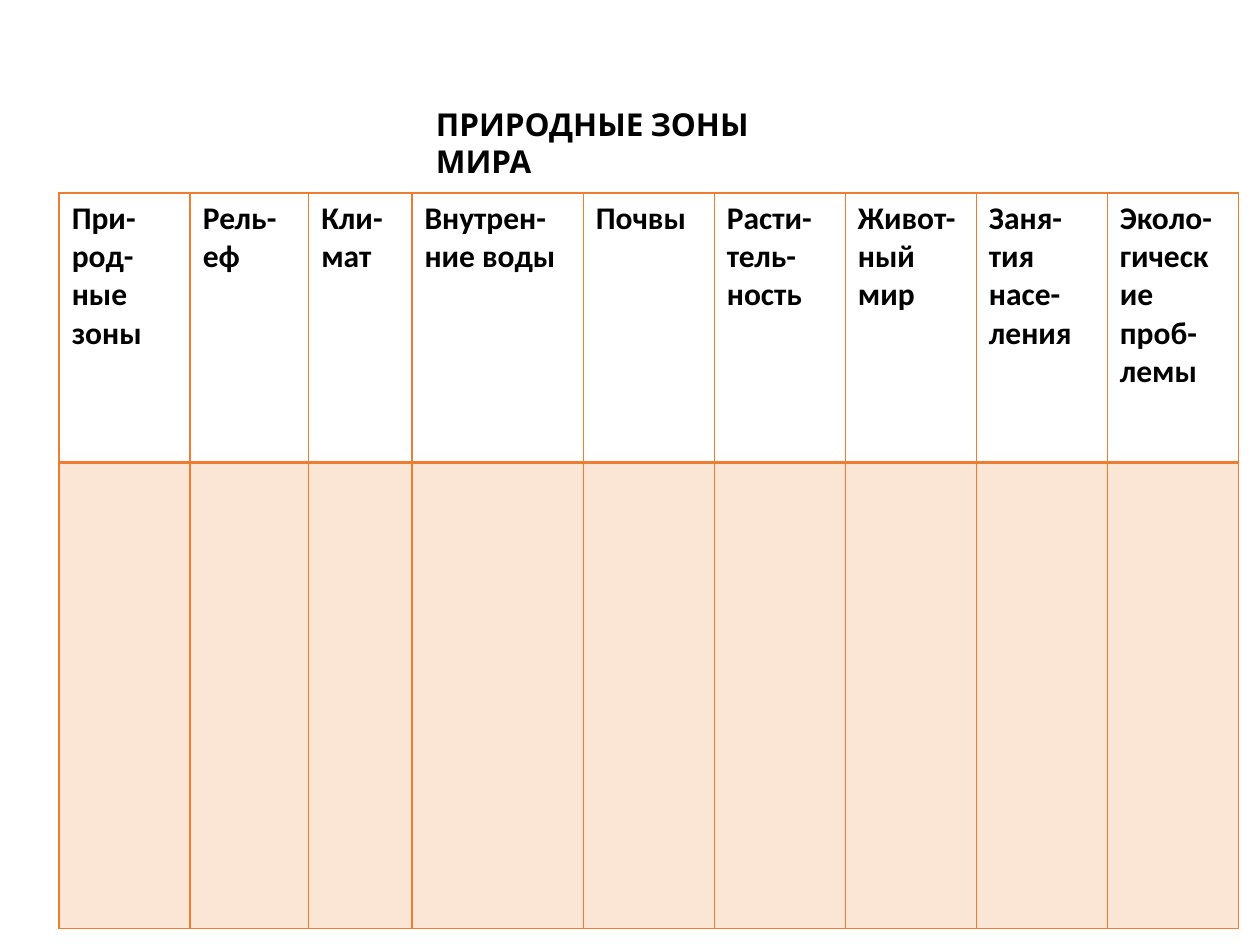
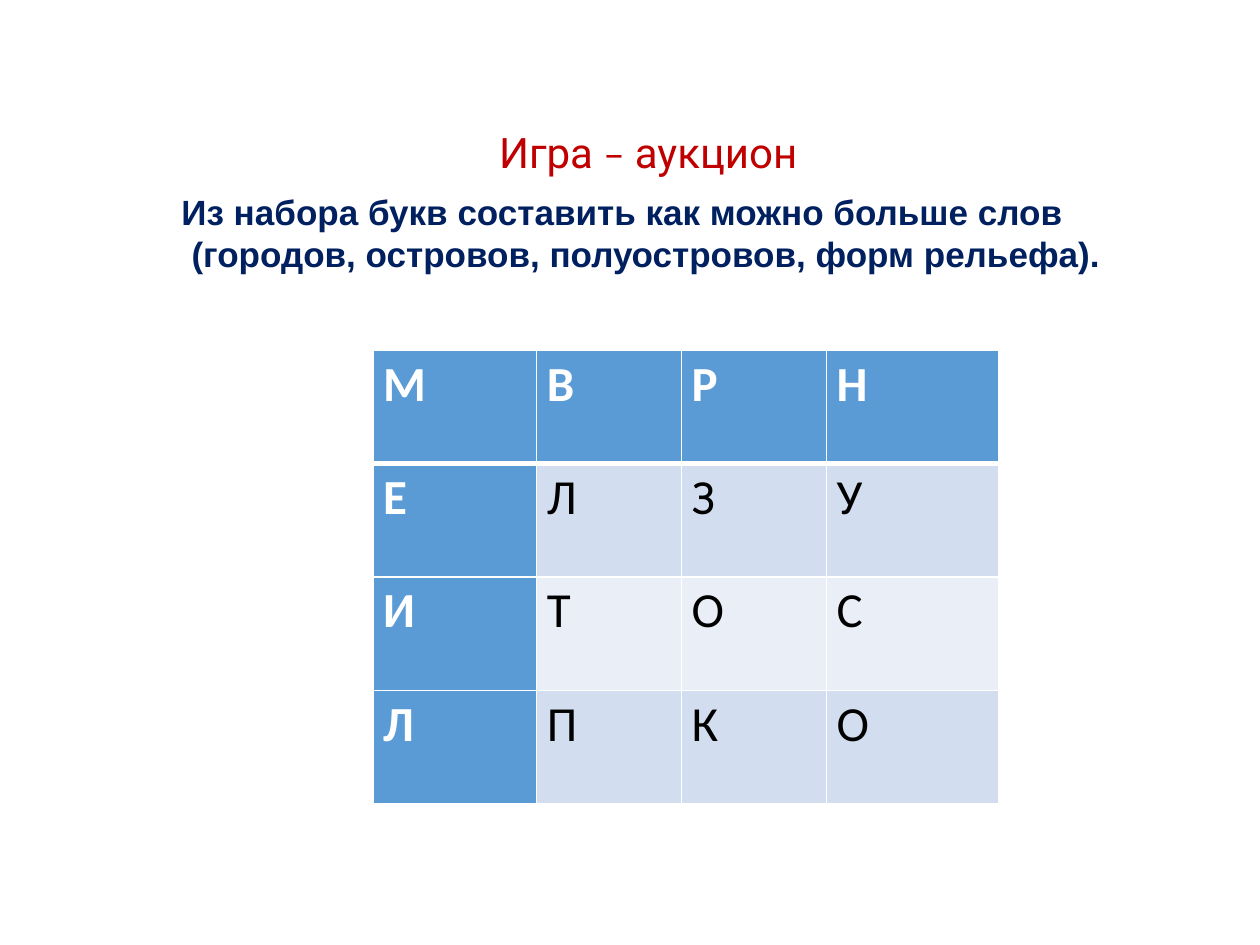
from lxml.etree import SubElement
from pptx import Presentation
from pptx.dml.color import RGBColor
from pptx.enum.text import MSO_ANCHOR, MSO_AUTO_SIZE, PP_ALIGN
from pptx.oxml.ns import qn
from pptx.util import Emu, Pt

SCALE = 9144
BLACK = RGBColor(0x00, 0x00, 0x00)
WHITE = RGBColor(0xFF, 0xFF, 0xFF)
ORANGE = RGBColor(0xED, 0x7D, 0x31)
RED = RGBColor(0xC0, 0x00, 0x00)
NAVY = RGBColor(0x00, 0x20, 0x60)
BLUE = RGBColor(0x5B, 0x9B, 0xD5)
BANDS = (RGBColor(0xEA, 0xEF, 0xF7), RGBColor(0xD2, 0xDE, 0xEF))

HEADS = ["При-род-ные зоны", "Рель-еф", "Кли-мат", "Внутрен-ние воды", "Почвы",
         "Расти-тель-ность", "Живот-ный мир", "Заня-тия насе-ления",
         "Эколо-гические проб-лемы"]
LETTERS = ["МВРН", "ЕЛЗУ", "ИТОС", "ЛПКО"]


def px(count):
    return Emu(count * SCALE)


def style(run, size, name, color, bold=False):
    font = run.font
    font.size, font.name, font.bold = Pt(size), name, bold
    font.color.rgb = color


def add_line(para, text, *look):
    run = para.add_run()
    run.text = text
    style(run, *look)


def add_title(slide, left, top, width, height, inset=5):
    title = slide.shapes.title
    title.left, title.top = px(left), px(top)
    title.width, title.height = px(width), px(height)
    frame = title.text_frame
    frame.word_wrap = True
    frame.auto_size = MSO_AUTO_SIZE.NONE
    frame.vertical_anchor = MSO_ANCHOR.TOP
    frame.margin_top = px(inset)
    return frame


def add_grid(slide, left, top, cols, rows):
    frame = slide.shapes.add_table(len(rows), len(cols), px(left), px(top),
                                   px(sum(cols)), px(sum(rows)))
    table = frame.table
    table.first_row = table.horz_banding = False
    for col, width in zip(table.columns, cols):
        col.width = px(width)
    for row, height in zip(table.rows, rows):
        row.height = px(height)
    return table


def add_edges(cell, row, color, heavy):
    props = cell._tc.get_or_add_tcPr()
    widths = {"L": 1, "R": 1, "T": heavy if row == 1 else 1,
              "B": heavy if row == 0 else 1}
    for side, width in widths.items():
        line = SubElement(props, qn(f"a:ln{side}"), w=str(Pt(width)))
        fill = SubElement(line, qn("a:solidFill"))
        SubElement(fill, qn("a:srgbClr"), val=str(color))


def set_fill(cell, color, alpha=None):
    cell.fill.solid()
    cell.fill.fore_color.rgb = color
    if alpha:
        tone = cell._tc.tcPr.find(qn("a:solidFill"))[0]
        SubElement(tone, qn("a:alpha"), val=str(alpha * 1000))


def set_text(cell, text, *look):
    para = cell.text_frame.paragraphs[0]
    add_line(para, text, *look)
    return para


def build_zones(deck):
    slide = deck.slides.add_slide(deck.slide_layouts[5])
    para = add_title(slide, 336, 78, 327, 40).paragraphs[0]
    para.alignment = PP_ALIGN.LEFT
    add_line(para, "ПРИРОДНЫЕ ЗОНЫ МИРА", 18, "Cabin", BLACK, True)
    cols = [104, 94, 82, 136] + [104] * 5
    table = add_grid(slide, 47, 153, cols, [214, 370])
    for col, head in enumerate(HEADS):
        top, body = table.cell(0, col), table.cell(1, col)
        add_edges(top, 0, ORANGE, 2)
        add_edges(body, 1, ORANGE, 2)
        top.fill.background()
        set_fill(body, ORANGE, 20)
        set_text(top, head, 18, "Calibri", BLACK, True)


def build_game(deck):
    slide = deck.slides.add_slide(deck.slide_layouts[5])
    frame = add_title(slide, 134, 92, 761, 158, 8)
    para = frame.paragraphs[0]
    para.alignment = PP_ALIGN.CENTER
    para.space_after = Pt(8)
    for text, name in (("Игра ", "Roboto"), ("–", "Calibri"), (" аукцион", "Roboto")):
        add_line(para, text, 24, name, RED)
    for text, indent in (("Из набора букв составить как можно больше слов", 0),
                         ("(городов, островов, полуостровов, форм рельефа).", 8)):
        para = frame.add_paragraph()
        para.alignment = PP_ALIGN.LEFT
        para._p.get_or_add_pPr().set("marL", str(px(indent)))
        add_line(para, text, 20, "Arial", NAVY, True)
    table = add_grid(slide, 296, 278, [130, 115, 115, 137], [90] * 4)
    for row, word in enumerate(LETTERS):
        for col, sign in enumerate(word):
            cell = table.cell(row, col)
            head = row == 0 or col == 0
            add_edges(cell, row, WHITE, 3)
            set_fill(cell, BLUE if head else BANDS[row % 2])
            cell.margin_left = px(8)
            cell.margin_top = cell.margin_right = cell.margin_bottom = 0
            para = set_text(cell, sign, 28, "Calibri", WHITE if head else BLACK, head)
            para.line_spacing = 1.07
            para.space_after = Pt(7.5)


def main():
    deck = Presentation()
    deck.slide_width, deck.slide_height = px(1000), px(750)
    build_zones(deck)
    build_game(deck)
    deck.save("out.pptx")


if __name__ == "__main__":
    main()
